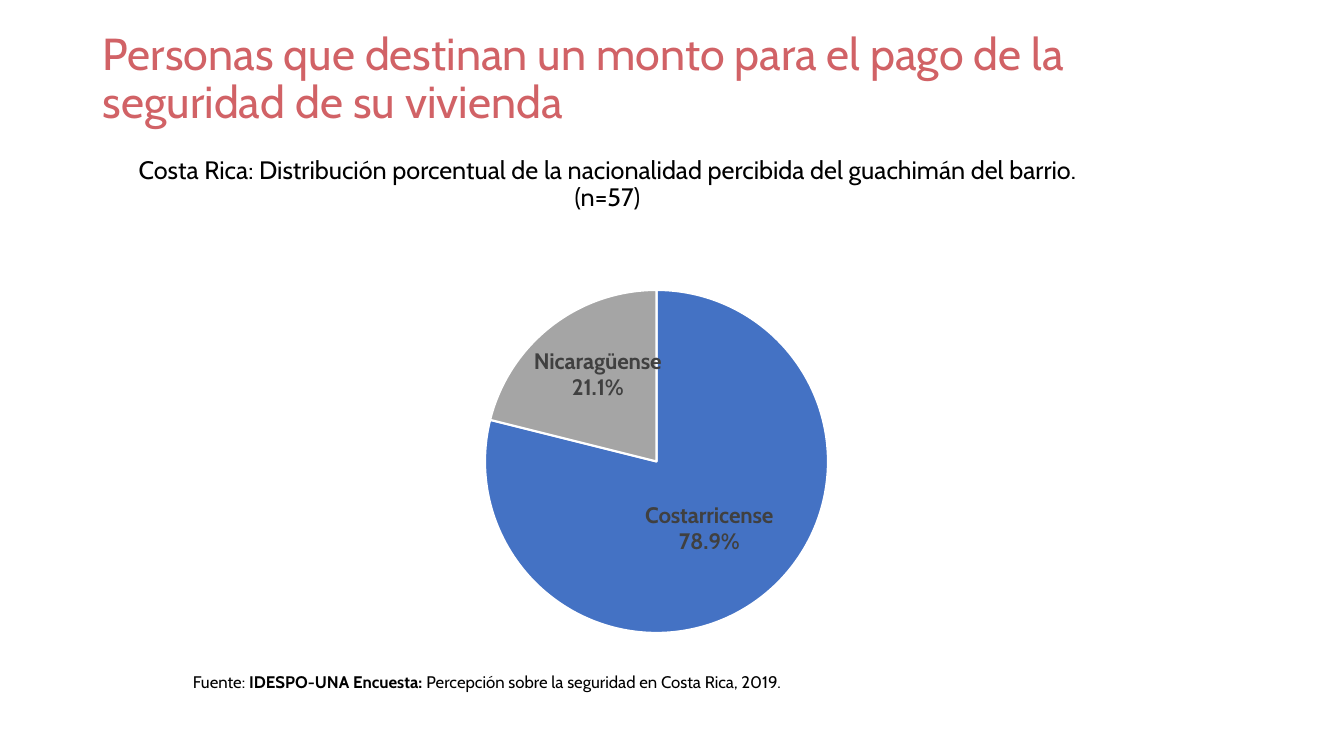
"""Builds a slide on the perceived nationality of neighbourhood guards."""
from copy import deepcopy

from lxml import etree
from pptx import Presentation
from pptx.chart.data import CategoryChartData
from pptx.dml.color import RGBColor
from pptx.enum.chart import XL_CHART_TYPE, XL_LABEL_POSITION
from pptx.enum.text import MSO_ANCHOR, PP_ALIGN
from pptx.oxml import parse_xml
from pptx.oxml.ns import qn
from pptx.util import Pt

PIE = XL_CHART_TYPE.PIE
LABEL_CENTER = XL_LABEL_POSITION.CENTER
LEFT, CENTER = PP_ALIGN.LEFT, PP_ALIGN.CENTER
TOP, MIDDLE = MSO_ANCHOR.TOP, MSO_ANCHOR.MIDDLE

FONT = "Cabin"
COLORS = {"title": "D16266", "text": "000000", "label": "404040",
          "border": "FFFFFF"}
TEXTS = [
    {"box": (93, 7, 1102, 146), "size": 32, "color": "title", "align": LEFT,
     "anchor": MIDDLE, "spacing": 0.9,
     "runs": [("Personas que destinan un monto para el pago de la seguridad "
               "de su vivienda", False)]},
    {"box": (103, 153, 1009, 527), "size": 18, "color": "text",
     "align": CENTER, "anchor": TOP, "spacing": 0.9,
     "runs": [("Costa Rica: Distribución porcentual de la nacionalidad "
               "percibida del guachimán del barrio. (n=57)", False)]},
    {"box": (183, 667, 647, 30), "size": 12, "color": "text", "align": LEFT,
     "anchor": TOP, "spacing": 1.0,
     "runs": [("Fuente: ", False), ("IDESPO-UNA Encuesta: ", True),
              ("Percepción sobre la seguridad en Costa Rica, 2019.", False)]},
]
NATIONALITIES = [("Costarricense", 78.9, "4472C4"),
                 ("Nicaragüense", 21.1, "A5A5A5")]
CHART_BOX = (246, 237, 724, 411)
PIE_BOX = (239, 53, 343, 343)
LABEL_SHIFTS = {1: (-6, -19)}

PX = 914400 / 100.8
SLIDE_SIZE = (1344, 756)


def emu(*lengths):
    return [round(length * PX) for length in lengths]


def style_font(font, size, color, bold=False):
    font.name = FONT
    font.size = Pt(size)
    font.bold = bold
    font.color.rgb = RGBColor.from_string(COLORS[color])


def add_text(slide, item):
    frame = slide.shapes.add_textbox(*emu(*item["box"])).text_frame
    frame.word_wrap = True
    frame.vertical_anchor = item["anchor"]
    paragraph = frame.paragraphs[0]
    paragraph.alignment = item["align"]
    paragraph.line_spacing = item["spacing"]
    for text, bold in item["runs"]:
        run = paragraph.add_run()
        run.text = text
        style_font(run.font, item["size"], item["color"], bold)


def manual_layout(modes, **lengths):
    """Returns a layout with lengths in px as shares of the chart."""
    namespace = qn("c:layout")[1:].split("}")[0]
    shares = {"x": CHART_BOX[2], "w": CHART_BOX[2],
              "y": CHART_BOX[3], "h": CHART_BOX[3]}
    values = "".join(f'<c:{key} val="{length / shares[key]:.4f}"/>'
                     for key, length in lengths.items())
    return parse_xml(f'<c:layout xmlns:c="{namespace}"><c:manualLayout>'
                     f'{modes}{values}</c:manualLayout></c:layout>')


def style_labels(series):
    labels = series.data_labels
    labels.show_category_name = True
    labels.show_percentage = True
    labels.show_value = False
    labels.number_format = "0.0%"
    labels.number_format_is_linked = False
    labels.position = LABEL_CENTER
    style_font(labels.font, 16, "label", True)
    element = series._element.find(qn("c:dLbls"))
    separator = etree.Element(qn("c:separator"))
    separator.text = "\n"
    element.find(qn("c:showBubbleSize")).addnext(separator)
    shared = [child for child in element
              if child.tag != qn("c:showLeaderLines")]
    for position, (index, (x, y)) in enumerate(LABEL_SHIFTS.items()):
        label = etree.Element(qn("c:dLbl"))
        etree.SubElement(label, qn("c:idx")).set("val", str(index))
        label.append(manual_layout("", x=x, y=y))
        label.extend(deepcopy(child) for child in shared)
        element.insert(position, label)


def add_pie(slide):
    data = CategoryChartData()
    data.categories = [name for name, _, _ in NATIONALITIES]
    data.add_series("Series 1", [value for _, value, _ in NATIONALITIES])
    chart = slide.shapes.add_chart(PIE, *emu(*CHART_BOX), data).chart
    chart.has_legend = False
    chart.has_title = False
    style_font(chart.font, 10, "text")
    plot = chart.plots[0]
    plot.vary_by_categories = True
    series = plot.series[0]
    for index, (_, _, color) in enumerate(NATIONALITIES):
        slice_format = series.points[index].format
        slice_format.fill.solid()
        slice_format.fill.fore_color.rgb = RGBColor.from_string(color)
        slice_format.line.color.rgb = RGBColor.from_string(COLORS["border"])
        slice_format.line.width = Pt(1.5)
    style_labels(series)
    plot_area = chart._chartSpace.find(".//" + qn("c:plotArea"))
    for layout in plot_area.findall(qn("c:layout")):
        plot_area.remove(layout)
    modes = ('<c:layoutTarget val="inner"/><c:xMode val="edge"/>'
             '<c:yMode val="edge"/>')
    plot_area.insert(0, manual_layout(modes, **dict(zip("xywh", PIE_BOX))))


def main():
    presentation = Presentation()
    presentation.slide_width, presentation.slide_height = emu(*SLIDE_SIZE)
    slide = presentation.slides.add_slide(presentation.slide_layouts[6])
    for item in TEXTS:
        add_text(slide, item)
    add_pie(slide)
    presentation.save("out.pptx")


if __name__ == "__main__":
    main()
